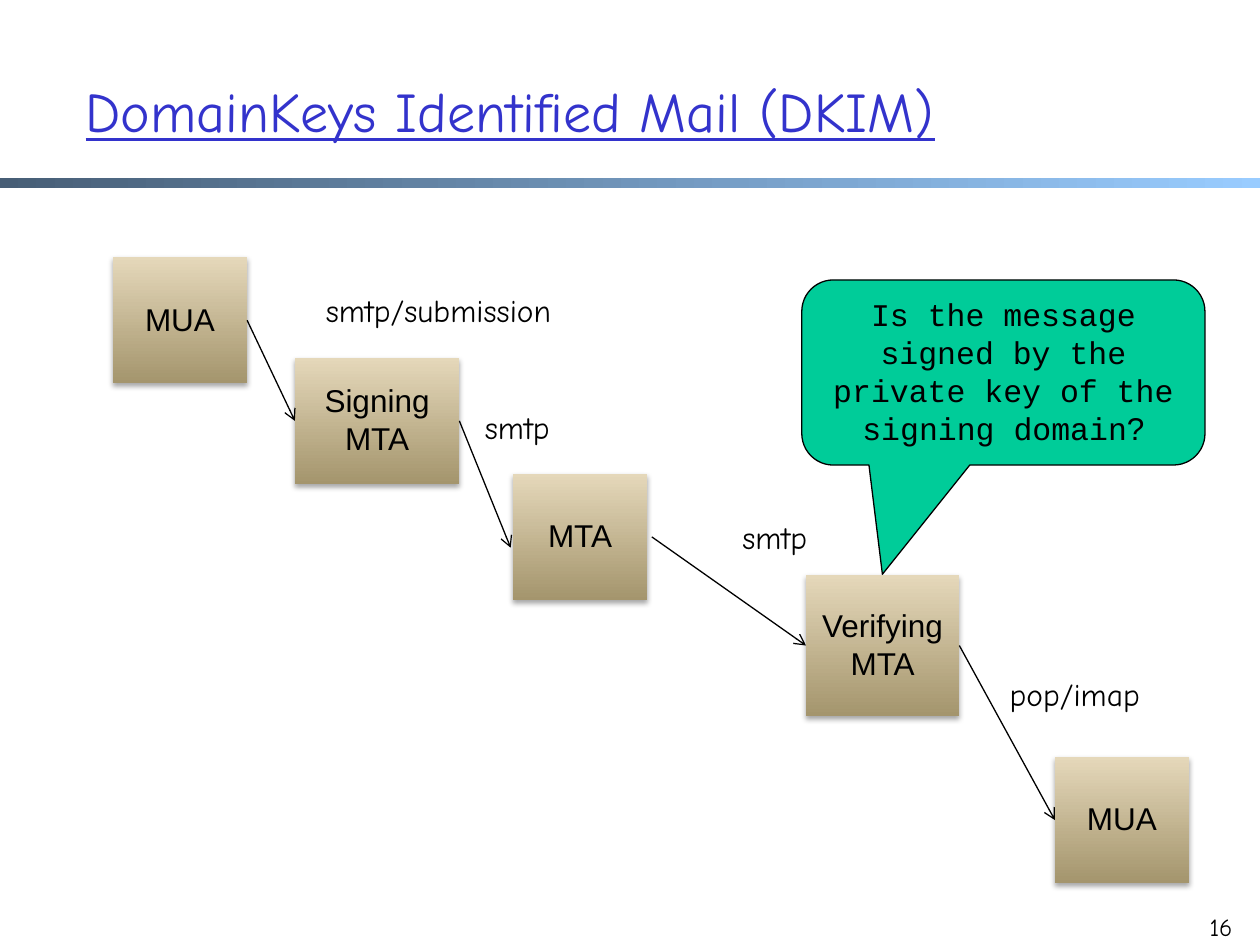
from lxml.etree import SubElement
from pptx import Presentation
from pptx.dml.color import RGBColor
from pptx.enum.shapes import MSO_CONNECTOR, MSO_SHAPE
from pptx.enum.text import MSO_ANCHOR, PP_ALIGN
from pptx.oxml.ns import qn
from pptx.util import Pt

BLACK = RGBColor(0x00, 0x00, 0x00)
TITLE_BLUE = RGBColor(0x33, 0x33, 0xCC)
BAR_DARK = RGBColor(0x47, 0x5E, 0x76)
BAR_LIGHT = RGBColor(0x99, 0xCC, 0xFF)
TAN_DARK = RGBColor(0xA4, 0x95, 0x6D)
TAN_LIGHT = RGBColor(0xE5, 0xD8, 0xBA)
GREEN = RGBColor(0x00, 0xCC, 0x99)

HAND, SANS, MONO = "Comic Neue", "Arial", "Courier New"
LEFT, CENTER, RIGHT = PP_ALIGN.LEFT, PP_ALIGN.CENTER, PP_ALIGN.RIGHT
SIDE_LEFT, SIDE_RIGHT = 1, 3

TITLE = "DomainKeys Identified Mail (DKIM)"
PAGE = "16"
QUESTION = [
    ("Is the message signed by the private key of the signing domain", MONO),
    ("?", SANS),
]

# Mail hops in order: lines of text, (left, top, width, height)
HOPS = [
    (["MUA"], (64.6, 147, 76.6, 72)),
    (["Signing", "MTA"], (168.5, 204.5, 94, 72)),
    (["MTA"], (293.2, 270.8, 76.6, 72)),
    (["Verifying", "MTA"], (460.6, 328.6, 87.6, 80.6)),
    (["MUA"], (602.8, 432.6, 76.6, 72)),
]

# One arrow per pair of hops; a free end is given as a point, None joins the box
ARROW_ENDS = [
    (None, None),
    (None, (291.8, 313)),
    ((372.5, 306.8), None),
    (None, None),
]

# Protocol labels: text, (left, top, width, height)
LABELS = [
    ("smtp/submission", (172.8, 162.7, 155.5, 29)),
    ("smtp", (267.8, 229.7, 55.6, 29)),
    ("smtp", (414.7, 292.3, 56, 29)),
    ("pop/imap", (568.8, 382.3, 90.7, 29)),
]

prs = Presentation()
prs.slide_width, prs.slide_height = Pt(720), Pt(540)
slide = prs.slides.add_slide(prs.slide_layouts[6])
shapes = slide.shapes


def add_run(p, text, font, size, color=BLACK):
    r = p.add_run()
    r.text = text
    r.font.name, r.font.size = font, Pt(size)
    r.font.color.rgb = color
    return r


def add_label(text, box, size, align, color=BLACK, wrap=True, anchor=MSO_ANCHOR.TOP):
    tf = shapes.add_textbox(*map(Pt, box)).text_frame
    tf.word_wrap, tf.vertical_anchor = wrap, anchor
    p = tf.paragraphs[0]
    p.alignment = align
    return add_run(p, text, HAND, size, color)


def add_gradient_box(box, start, end, angle):
    s = shapes.add_shape(MSO_SHAPE.RECTANGLE, *map(Pt, box))
    s.shadow.inherit = False
    s.line.fill.background()
    s.fill.gradient()
    s.fill.gradient_angle = angle
    for stop, color in zip(s.fill.gradient_stops, (start, end)):
        stop.color.rgb = color
    return s


def add_soft_shadow(s):
    effects = s._element.spPr.find(qn("a:effectLst"))
    shadow = SubElement(effects, qn("a:outerShdw"), blurRad=str(Pt(3.1)),
                        dist=str(Pt(1.8)), dir="5400000", rotWithShape="0")
    color = SubElement(shadow, qn("a:srgbClr"), val=str(BLACK))
    SubElement(color, qn("a:alpha"), val="35000")


def add_hop(lines, box):
    s = add_gradient_box(box, TAN_DARK, TAN_LIGHT, 90)
    add_soft_shadow(s)
    tf = s.text_frame
    tf.word_wrap, tf.vertical_anchor = True, MSO_ANCHOR.MIDDLE
    tf.margin_top, tf.margin_bottom = Pt(1.5), Pt(3.6)
    p = tf.paragraphs[0]
    p.alignment = CENTER
    for i, line in enumerate(lines):
        if i:
            p.add_line_break()
        add_run(p, line, SANS, 18)
    return s


def add_arrow(source, target, start, end):
    x1, y1 = map(Pt, start or (0, 0))
    x2, y2 = map(Pt, end or (0, 0))
    c = shapes.add_connector(MSO_CONNECTOR.STRAIGHT, x1, y1, x2, y2)
    if start is None:
        c.begin_connect(source, SIDE_RIGHT)
    if end is None:
        c.end_connect(target, SIDE_LEFT)
    c.line.color.rgb, c.line.width = BLACK, Pt(0.75)
    SubElement(c.line._get_or_add_ln(), qn("a:tailEnd"), type="arrow")
    SubElement(c._element.spPr, qn("a:effectLst"))


add_gradient_box((0, 101.5, 720, 6), BAR_DARK, BAR_LIGHT, 0)
add_label(PAGE, (675.4, 517.7, 36, 36), 14, RIGHT)
title = add_label(TITLE, (41.8, 18, 612, 90), 32, LEFT, TITLE_BLUE,
                  anchor=MSO_ANCHOR.MIDDLE)
title.font.underline = True

hops = [add_hop(lines, box) for lines, box in HOPS]
for source, target, ends in zip(hops, hops[1:], ARROW_ENDS):
    add_arrow(source, target, *ends)
for text, box in LABELS:
    add_label(text, box, 18, CENTER, wrap=False)

callout = shapes.add_shape(MSO_SHAPE.ROUNDED_RECTANGULAR_CALLOUT,
                           Pt(458.2), Pt(160), Pt(230.4), Pt(105.8))
callout.shadow.inherit = False
for i, value in enumerate((-0.3, 1.09, 0.17)):
    callout.adjustments[i] = value
callout.fill.solid()
callout.fill.fore_color.rgb = GREEN
callout.line.color.rgb, callout.line.width = BLACK, Pt(0.75)
tf = callout.text_frame
tf.word_wrap, tf.vertical_anchor = True, MSO_ANCHOR.TOP
p = tf.paragraphs[0]
p.alignment = CENTER
for text, font in QUESTION:
    add_run(p, text, font, 18)

prs.save("out.pptx")
